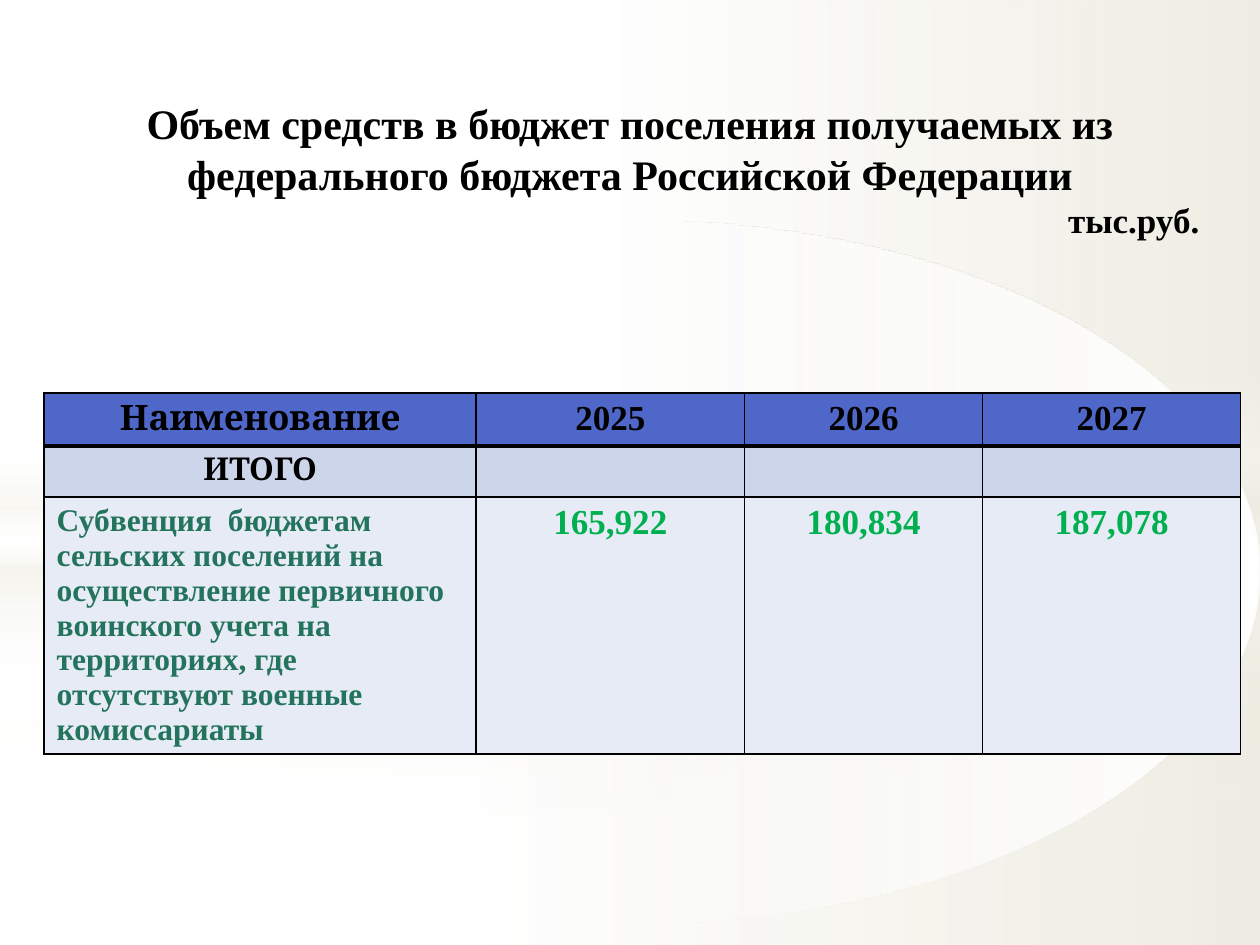
from lxml import etree
from pptx import Presentation
from pptx import util as u
from pptx.dml import color
from pptx.enum import shapes, text
from pptx.oxml import ns

SERIF, HEADING = "Times New Roman", "Cambria"
WHITE, CREAM, BLACK = "FFFFFF", "EEECE1", "000000"
GREEN, TEAL = "00B050", "23735D"
THIN, THICK = 0.96, 3
CENTER, LEFT, RIGHT = text.PP_ALIGN.CENTER, text.PP_ALIGN.LEFT, text.PP_ALIGN.RIGHT

# Gradient stops: position %, colour, opacity %
BAND = [(0, WHITE, 0), (29, WHITE, 30), (45, CREAM, 40),
        (55, WHITE, 26), (65, CREAM, 60), (100, WHITE, 0)]


def rgb(value):
    return color.RGBColor.from_string(value)


def child(parent, tag, **attributes):
    return etree.SubElement(parent, ns.qn(tag), {k: str(v) for k, v in attributes.items()})


def write(para, words, size=18, font=SERIF, ink=BLACK, align=CENTER):
    para.alignment = align
    span = para.add_run()
    span.text = words
    span.font.size, span.font.name, span.font.bold = u.Pt(size), font, True
    span.font.color.rgb = rgb(ink)


def add_glow(page, kind, top, height, stops, angle=0):
    """Full-width shape with a semi-transparent gradient."""
    shape = page.shapes.add_shape(kind, 0, u.Cm(top), u.Cm(25.4), u.Cm(height))
    shape.shadow.inherit = False
    shape.line.fill.background()
    geometry = shape._element.spPr.find(ns.qn("a:prstGeom"))
    gradient = etree.Element(ns.qn("a:gradFill"), rotWithShape="1")
    stop_list = child(gradient, "a:gsLst")
    for position, ink, opacity in stops:
        stop = child(stop_list, "a:gs", pos=position * 1000)
        child(child(stop, "a:srgbClr", val=ink), "a:alpha", val=opacity * 1000)
    child(gradient, "a:lin", ang=angle * 60000, scaled=0)
    geometry.addnext(gradient)


def add_backdrop(page, split, band_top, fade, opacity):
    """One layer: lower and upper washes, a soft band and a large ellipse."""
    rect, oval = shapes.MSO_SHAPE.RECTANGLE, shapes.MSO_SHAPE.OVAL
    low, low_mid, high, high_mid, edge = opacity
    add_glow(page, rect, split, 19.05 - split,
             [(0, WHITE, low), (37, WHITE, low_mid), (100, CREAM, edge)])
    add_glow(page, rect, 0, split,
             [(0, WHITE, high), (48, WHITE, high_mid), (100, CREAM, edge)])
    add_glow(page, rect, band_top, 6.35, BAND, angle=90)
    add_glow(page, oval, 4.45, 14.17, [(0, WHITE, 100), (fade, WHITE, 0)], angle=180)


def add_title(page, left, top, width, height):
    box = page.shapes.title
    box.left, box.top, box.width, box.height = map(u.Cm, (left, top, width, height))
    frame = box.text_frame
    frame.word_wrap, frame.auto_size = True, text.MSO_AUTO_SIZE.NONE
    frame.vertical_anchor = text.MSO_ANCHOR.MIDDLE
    frame.margin_left = frame.margin_right = u.Cm(1.22)
    write(frame.paragraphs[0], "Объем средств в бюджет поселения получаемых из "
          "федерального бюджета Российской Федерации", size=24)
    write(frame.add_paragraph(), "тыс.руб.", size=20, align=RIGHT)
    for para in frame.paragraphs:
        para.space_before = u.Pt(0)
    page.shapes._spTree.append(box._element)  # bring in front of the backdrop


def style_cell(cell, fill, top, bottom):
    properties = cell._tc.get_or_add_tcPr()
    for side, width in (("L", THIN), ("R", THIN), ("T", top), ("B", bottom)):
        line = child(properties, f"a:ln{side}", w=int(u.Pt(width)))
        child(child(line, "a:solidFill"), "a:srgbClr", val=BLACK)
    cell.fill.solid()
    cell.fill.fore_color.rgb = rgb(fill)


def add_budget_table(page, left, top, widths, heights):
    head, amount = dict(size=20), dict(size=20, ink=GREEN)
    rows = [
        ("4E67C8", THIN, THICK, [("Наименование", dict(size=20, font=HEADING)),
                                 ("2025", head), ("2026", head), ("2027", head)]),
        ("CCD5EA", THICK, THIN, [("ИТОГО", dict(font=HEADING))] + [("", {})] * 3),
        ("E7EBF5", THIN, THIN, [
            ("Субвенция  бюджетам сельских поселений на осуществление первичного "
             "воинского учета на территориях, где отсутствуют военные комиссариаты",
             dict(ink=TEAL, align=LEFT)),
            ("165,922", amount), ("180,834", amount), ("187,078", amount)]),
    ]
    table = page.shapes.add_table(len(rows), len(widths), u.Cm(left), u.Cm(top),
                                  u.Cm(sum(widths)), u.Cm(sum(heights))).table
    for column, width in zip(table.columns, widths):
        column.width = u.Cm(width)
    for r, (fill, over, under, entries) in enumerate(rows):
        table.rows[r].height = u.Cm(heights[r])
        for c, (words, look) in enumerate(entries):
            cell = table.cell(r, c)
            style_cell(cell, fill, over, under)
            if words:
                write(cell.text_frame.paragraphs[0], words, **look)


def main():
    deck = Presentation()
    deck.slide_width, deck.slide_height = u.Cm(25.4), u.Cm(19.05)
    page = deck.slides.add_slide(deck.slide_layouts[5])
    # Two background layers
    add_backdrop(page, 14.18, 10.46, 56, (91, 76, 89, 62, 79))
    add_backdrop(page, 10.75, 7.37, 54, (92, 77, 90, 63, 80))
    # Content
    add_budget_table(page, 0.89, 7.92, (8.71, 5.41, 4.8, 5.2), (1.04, 0.89, 5.18))
    add_title(page, 0, 1.52, 25.4, 3.78)
    deck.save("out.pptx")


if __name__ == "__main__":
    main()
